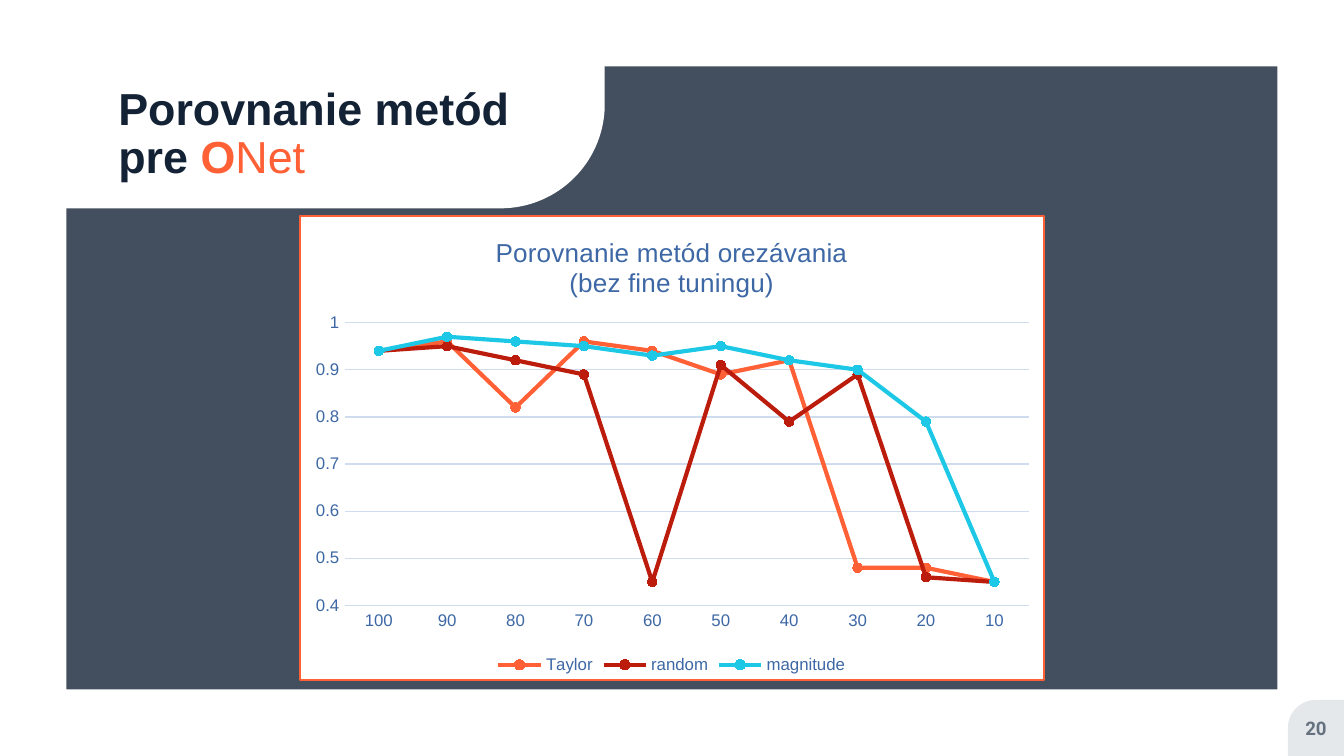
import pptx
import pptx.util
import pptx.chart.data
import pptx.dml.color
import pptx.enum.chart
import pptx.enum.shapes
import pptx.enum.text
import pptx.oxml
import pptx.oxml.ns

Pt = pptx.util.Pt
SHAPE = pptx.enum.shapes.MSO_SHAPE
ALIGN = pptx.enum.text.PP_ALIGN
MIDDLE = pptx.enum.text.MSO_ANCHOR.MIDDLE
TICK = pptx.enum.chart.XL_TICK_MARK
NS = pptx.oxml.ns.nsdecls("a", "c")
qn = pptx.oxml.ns.qn

WIDE, HIGH = 720, 405
NAVY, ORANGE, WHITE = "142236", "FF6035", "FFFFFF"
BLUE, PALE = "3D68A5", "CFDCED"


def rgb(code):
    return pptx.dml.color.RGBColor.from_string(code)


class Deck:
    face = "Arial"

    def __init__(self):
        self.prs = pptx.Presentation()
        self.prs.slide_width, self.prs.slide_height = Pt(WIDE), Pt(HIGH)
        self.slide = self.prs.slides.add_slide(self.prs.slide_layouts[5])

    def font(self, font, size, color, bold=False, face=None):
        font.name, font.size, font.bold = face or self.face, Pt(size), bold
        font.color.rgb = rgb(color)

    def frame(self, text, low=0):
        text.word_wrap = True
        text.auto_size = pptx.enum.text.MSO_AUTO_SIZE.NONE
        text.vertical_anchor = MIDDLE
        text.margin_left = text.margin_right = text.margin_top = 0
        text.margin_bottom = Pt(low)

    def shape(self, kind, box, color, adjust=None, alpha=None):
        item = self.slide.shapes.add_shape(kind, *map(Pt, box))
        item.shadow.inherit = False
        item.line.fill.background()
        item.fill.solid()
        item.fill.fore_color.rgb = rgb(color)
        if adjust is not None:
            item.adjustments[0] = adjust
        if alpha is not None:
            tint = item._element.spPr.find(".//" + qn("a:srgbClr"))
            tint.append(pptx.oxml.parse_xml(f'<a:alpha {NS} val="{alpha * 1000}"/>'))
        return item

    def flip(self, item, turn=0):
        item._element.spPr.find(qn("a:xfrm")).set("flipH", "1")
        item.rotation = turn

    def title(self, box, lines, size, low):
        item = self.slide.shapes.title
        self.slide.shapes._spTree.append(item._element)
        item.left, item.top, item.width, item.height = map(Pt, box)
        self.frame(item.text_frame, low)
        para = item.text_frame.paragraphs[0]
        para.alignment, para.line_spacing = ALIGN.LEFT, 0.9
        for index, line in enumerate(lines):
            if index:
                para.add_line_break()
            for words, color, bold in line:
                run = para.add_run()
                run.text = words
                self.font(run.font, size, color, bold)

    def label(self, box, words, size, color, face):
        item = self.slide.shapes.add_textbox(*map(Pt, box))
        self.frame(item.text_frame)
        para = item.text_frame.paragraphs[0]
        para.alignment = ALIGN.CENTER
        run = para.add_run()
        run.text = words
        self.font(run.font, size, color, True, face)

    def chart(self, box, heads, cats, rows):
        data = pptx.chart.data.CategoryChartData()
        data.categories = cats
        for name, _, vals in rows:
            data.add_series(name, vals)
        kind = pptx.enum.chart.XL_CHART_TYPE.LINE_MARKERS
        chart = self.slide.shapes.add_chart(kind, *map(Pt, box), data).chart
        self.font(chart.font, 10, NAVY)

        # Heading and legend
        chart.has_title = True
        text = chart.chart_title.text_frame
        for index, head in enumerate(heads):
            para = text.add_paragraph() if index else text.paragraphs[0]
            run = para.add_run()
            run.text = head
            self.font(run.font, 14, BLUE)
        chart.chart_title.include_in_layout = False
        chart.has_legend = True
        chart.legend.position = pptx.enum.chart.XL_LEGEND_POSITION.BOTTOM
        chart.legend.include_in_layout = False
        self.font(chart.legend.font, 9, BLUE)

        # Axes
        down, across = chart.value_axis, chart.category_axis
        for axis in (down, across):
            axis.major_tick_mark = axis.minor_tick_mark = TICK.NONE
            self.font(axis.tick_labels.font, 9, BLUE)
        down.minimum_scale, down.maximum_scale, down.major_unit = 0.4, 1, 0.1
        down.format.line.fill.background()
        down.has_major_gridlines = True
        for line in (across.format.line, down.major_gridlines.format.line):
            line.color.rgb, line.width = rgb(PALE), Pt(0.75)

        # Lines and markers
        chart.plots[0].vary_by_categories = False
        for row, (_, color, _) in zip(chart.plots[0].series, rows):
            row.smooth = False
            row.format.line.color.rgb = rgb(color)
            row.format.line.width = Pt(2.25)
            mark = row.marker
            mark.style, mark.size = pptx.enum.chart.XL_MARKER_STYLE.CIRCLE, 5
            mark.format.fill.solid()
            mark.format.fill.fore_color.rgb = rgb(color)
            mark.format.line.color.rgb = rgb(color)

        # White card with an orange edge
        root = chart._chartSpace.find(qn("c:chart"))
        root.addnext(pptx.oxml.parse_xml(
            f'<c:spPr {NS}><a:solidFill><a:srgbClr val="{WHITE}"/></a:solidFill>'
            f'<a:ln w="{Pt(1)}"><a:solidFill><a:srgbClr val="{ORANGE}"/>'
            '</a:solidFill></a:ln></c:spPr>'))

        # Plot area as shares of the card
        area = root.find(qn("c:plotArea"))
        for old in area.findall(qn("c:layout")):
            area.remove(old)
        spots = {"x": 0.06, "y": 0.23, "w": 0.92, "h": 0.61}
        modes = '<c:xMode val="edge"/><c:yMode val="edge"/>'
        parts = "".join(f'<c:{key} val="{val}"/>' for key, val in spots.items())
        area.insert(0, pptx.oxml.parse_xml(
            f'<c:layout {NS}><c:manualLayout><c:layoutTarget val="inner"/>'
            f'{modes}{parts}</c:manualLayout></c:layout>'))


def main():
    deck = Deck()

    # Backdrop: dark panel, white frame, title corner, page tab
    page = (0, 0, WIDE, HIGH)
    tab = (WIDE - 30, HIGH - 30, 30, 30)
    deck.shape(SHAPE.RECTANGLE, page, NAVY, alpha=80)
    deck.shape(SHAPE.FRAME, page, WHITE, 0.088)
    corner = deck.shape(SHAPE.ROUND_1_RECTANGLE, (0, 0, 324, 111.6), WHITE, 0.5)
    deck.flip(corner, 180)
    deck.flip(deck.shape(SHAPE.ROUND_1_RECTANGLE, tab, "E5E8EB", 0.5))

    # Title and page number
    deck.title((63.4, 29.5, 262.8, 111.6), [
        [("Porovnanie metód", NAVY, True)],
        [("pre ", NAVY, True), ("O", ORANGE, True), ("Net", ORANGE, False)],
    ], size=24, low=26)
    deck.label(tab, "20", 10, "667180", "Roboto")

    # Pruning methods compared
    deck.chart(
        (160.2, 115.2, 399.4, 249.6),
        ["Porovnanie metód orezávania", "(bez fine tuningu)"],
        [str(left) for left in range(100, 0, -10)],
        [("Taylor", ORANGE,
          [0.94, 0.96, 0.82, 0.96, 0.94, 0.89, 0.92, 0.48, 0.48, 0.45]),
         ("random", "BB1C0B",
          [0.94, 0.95, 0.92, 0.89, 0.45, 0.91, 0.79, 0.89, 0.46, 0.45]),
         ("magnitude", "1DC8E6",
          [0.94, 0.97, 0.96, 0.95, 0.93, 0.95, 0.92, 0.9, 0.79, 0.45])])

    deck.prs.save("out.pptx")


if __name__ == "__main__":
    main()
